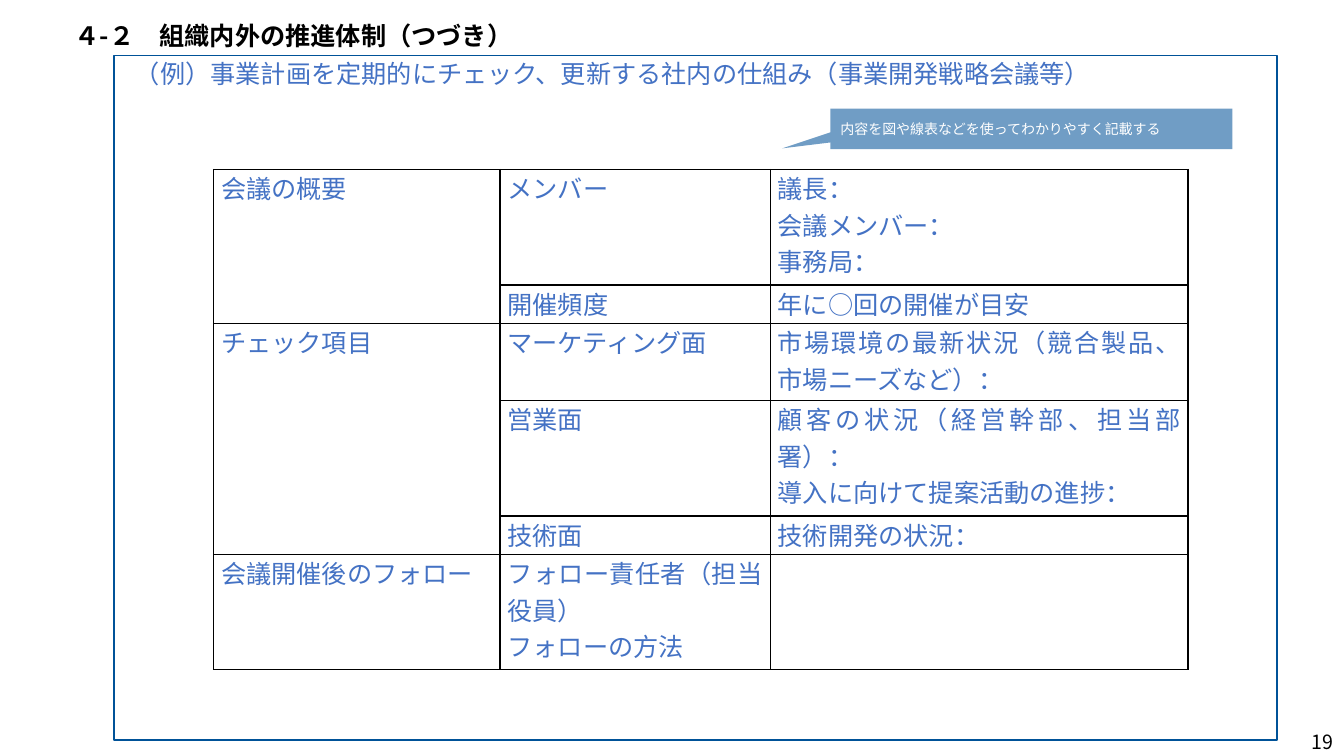
from lxml.etree import SubElement
from pptx import Presentation
from pptx.dml.color import RGBColor
from pptx.enum.shapes import MSO_SHAPE
from pptx.enum.text import MSO_ANCHOR, MSO_AUTO_SIZE, PP_ALIGN
from pptx.oxml import parse_xml
from pptx.oxml.ns import nsdecls, qn
from pptx.util import Cm, Pt

BLACK = RGBColor(0x00, 0x00, 0x00)
WHITE = RGBColor(0xFF, 0xFF, 0xFF)
NAVY = RGBColor(0x00, 0x52, 0x98)
BLUE = RGBColor(0x44, 0x72, 0xC4)
JP_FONT = "Noto Sans CJK JP"
LATIN_FONT = "Arial"

COLUMNS = (7.22, 6.81, 10.53)
LINE = 0.97  # height of one text line in the table
LINES_PER_ROW = (3, 1, 2, 3, 1, 3)
MEETING_ROWS = (
    ("会議の概要", "メンバー", "議長：\n会議メンバー：\n事務局："),
    ("", "開催頻度", "年に○回の開催が目安"),
    ("チェック項目", "マーケティング面", "市場環境の最新状況（競合製品、市場ニーズなど）："),
    ("", "営業面", "顧客の状況（経営幹部、担当部署）：\n導入に向けて提案活動の進捗："),
    ("", "技術面", "技術開発の状況："),
    ("会議開催後のフォロー", "フォロー責任者（担当役員）\nフォローの方法", ""),
)
MERGED_ROWS = ((0, 1), (2, 4))


class SlideBuilder:
    def __init__(self, slide):
        self.slide = slide

    def set_text(self, tf, text, size, color, font=JP_FONT, bold=False, align=PP_ALIGN.LEFT):
        tf.text = text
        for p in tf.paragraphs:
            p.alignment = align
            p.space_before = Pt(0)
            p.line_spacing = 1.0
            for r in p.runs:
                r.font.size = Pt(size)
                r.font.bold = bold
                r.font.color.rgb = color
                r.font.name = font
                SubElement(r._r.get_or_add_rPr(), qn("a:ea"), typeface=JP_FONT)

    def placeholder(self, sp, box, text, color, bold=False):
        sp.left, sp.top, sp.width, sp.height = map(Cm, box)
        tf = sp.text_frame
        tf.auto_size = MSO_AUTO_SIZE.NONE
        tf.vertical_anchor = MSO_ANCHOR.MIDDLE
        tf.margin_left = tf.margin_right = tf.margin_top = tf.margin_bottom = 0
        self.set_text(tf, text, 18, color, bold=bold)
        pPr = tf.paragraphs[0]._p.get_or_add_pPr()
        pPr.set("marL", "0")
        pPr.set("indent", "0")
        SubElement(pPr, qn("a:buNone"))

    def text_box(self, box, text, size, color, align):
        tf = self.slide.shapes.add_textbox(*map(Cm, box)).text_frame
        tf.word_wrap = True
        tf.vertical_anchor = MSO_ANCHOR.MIDDLE
        self.set_text(tf, text, size, color, align=align)

    def frame(self, box):
        sp = self.slide.shapes.add_shape(MSO_SHAPE.RECTANGLE, *map(Cm, box))
        sp.shadow.inherit = False
        sp.fill.background()
        sp.line.color.rgb = NAVY
        sp.line.width = Pt(1)

    def callout(self, box, pointer, text, opacity):
        sp = self.slide.shapes.add_shape(MSO_SHAPE.RECTANGULAR_CALLOUT, *map(Cm, box))
        sp.adjustments[0], sp.adjustments[1] = pointer
        sp.shadow.inherit = False
        sp.line.fill.background()
        sp.fill.solid()
        sp.fill.fore_color.rgb = NAVY
        color = sp._element.spPr.find(qn("a:solidFill"))[0]
        SubElement(color, qn("a:alpha"), val=str(opacity * 1000))
        tf = sp.text_frame
        tf.word_wrap = True
        tf.vertical_anchor = MSO_ANCHOR.MIDDLE
        self.set_text(tf, text, 10, WHITE, LATIN_FONT)

    def table(self, left, top, rows):
        heights = [n * LINE for n in LINES_PER_ROW]
        box = (left, top, sum(COLUMNS), sum(heights))
        table = self.slide.shapes.add_table(len(rows), len(COLUMNS), *map(Cm, box)).table
        table.first_row = table.horz_banding = False
        for column, width in zip(table.columns, COLUMNS):
            column.width = Cm(width)
        for row, height, texts in zip(table.rows, heights, rows):
            row.height = Cm(height)
            for cell, text in zip(row.cells, texts):
                self.cell(cell, text)
        for first, last in MERGED_ROWS:
            table.cell(first, 0).merge(table.cell(last, 0))

    def cell(self, cell, text):
        cell.margin_left = cell.margin_right = Cm(0.19)
        cell.margin_top = cell.margin_bottom = 0
        tcPr = cell._tc.get_or_add_tcPr()
        for side in "LRTB":
            tcPr.append(parse_xml(
                f'<a:ln{side} {nsdecls("a")} w="{Pt(1)}"><a:solidFill>'
                f'<a:srgbClr val="{BLACK}"/></a:solidFill></a:ln{side}>'))
        cell.fill.background()
        self.set_text(cell.text_frame, text, 18, BLUE, LATIN_FONT, align=PP_ALIGN.JUSTIFY)


def main():
    prs = Presentation()
    prs.slide_width, prs.slide_height = Cm(33.87), Cm(19.05)
    slide = prs.slides.add_slide(prs.slide_layouts[1])
    builder = SlideBuilder(slide)
    title, body = slide.placeholders
    builder.placeholder(title, (1.88, 0.45, 29, 0.9),
                        "４-２　組織内外の推進体制（つづき）", BLACK, bold=True)
    builder.placeholder(body, (3.4, 1.4, 28, 0.9),
                        "（例）事業計画を定期的にチェック、更新する社内の仕組み（事業開発戦略会議等）", BLUE)
    builder.frame((2.87, 1.4, 29.31, 17.25))
    builder.table(5.38, 4.27, MEETING_ROWS)
    builder.callout((20.93, 2.74, 10.13, 1.02), (-0.62, 0.48),
                    "内容を図や線表などを使ってわかりやすく記載する", 56)
    builder.text_box((31.7, 18.31, 2.16, 0.74), "19", 14, BLACK, PP_ALIGN.RIGHT)
    prs.save("out.pptx")


if __name__ == "__main__":
    main()
